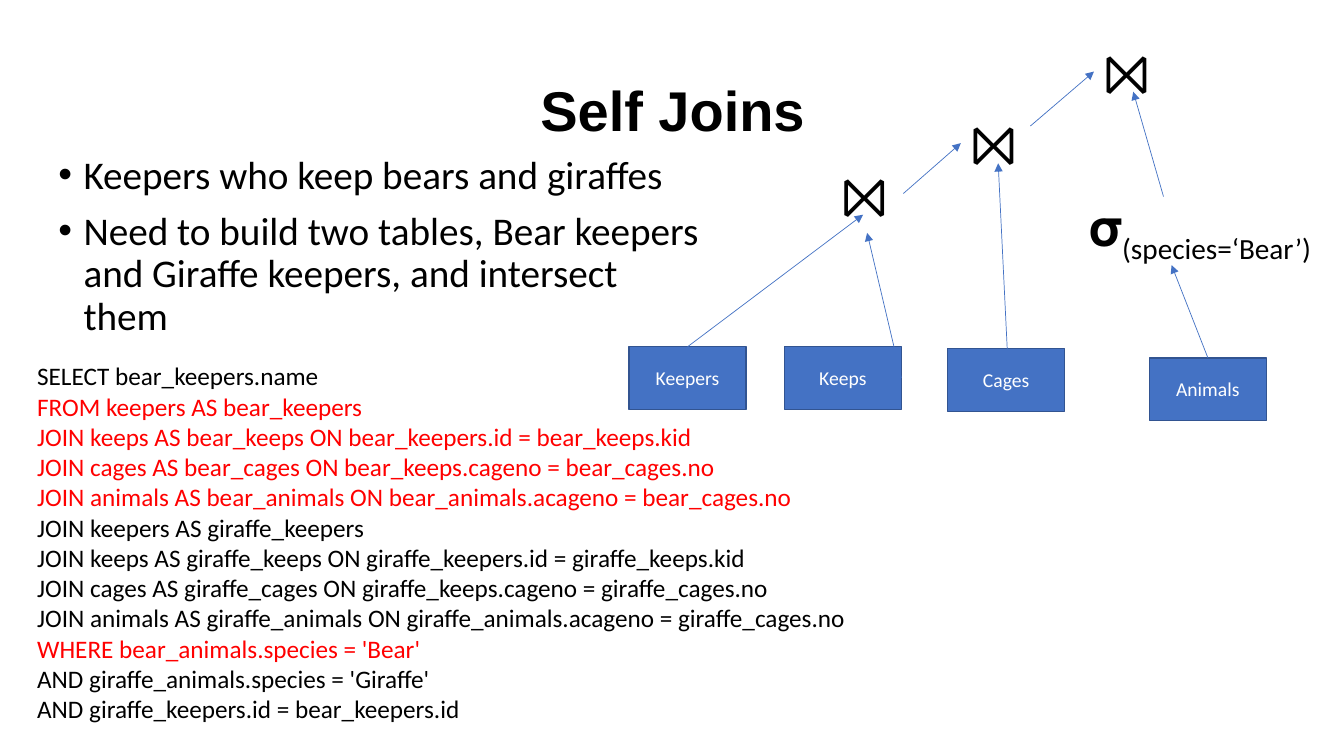
import dataclasses

import lxml.etree
import pptx
import pptx.dml.color
import pptx.enum.shapes
import pptx.enum.text
import pptx.oxml.ns
import pptx.util

Inches = pptx.util.Inches
Pt = pptx.util.Pt
qn = pptx.oxml.ns.qn
ANCHOR = pptx.enum.text.MSO_ANCHOR
ALIGN = pptx.enum.text.PP_ALIGN
BLACK, RED, WHITE, BLUE, NAVY = "000000", "FF0000", "FFFFFF", "4472C4", "325491"


@dataclasses.dataclass
class Relation:
    name: str
    x: float
    y: float


@dataclasses.dataclass
class Join:
    x: float
    y: float
    w: float


@dataclasses.dataclass
class Arrow:
    x1: float
    y1: float
    x2: float
    y2: float


RELATIONS = [
    Relation("Keepers", 6.24, 3.44),
    Relation("Keeps", 7.78, 3.44),
    Relation("Cages", 9.4, 3.46),
    Relation("Animals", 11.4, 3.55),
]
JOINS = [Join(8.25, 1.54, 0.71), Join(9.53, 1.03, 0.99), Join(10.85, 0.32, 0.58)]
ARROWS = [
    Arrow(8.94, 3.75, 8.6, 2.31),
    Arrow(9.99, 3.46, 9.9, 1.62),
    Arrow(8.96, 1.92, 9.53, 1.42),
    Arrow(6.82, 3.44, 8.56, 2.13),
    Arrow(11.54, 1.95, 11.24, 0.91),
    Arrow(10.22, 1.25, 10.85, 0.71),
    Arrow(11.98, 3.55, 11.62, 2.63),
]
BULLETS = [
    "Keepers who keep bears and giraffes",
    "Need to build two tables, Bear keepers and Giraffe keepers, and intersect them",
]
QUERY = [
    ("SELECT bear_keepers.name", BLACK),
    ("FROM keepers AS bear_keepers", RED),
    ("JOIN keeps AS bear_keeps ON bear_keepers.id = bear_keeps.kid", RED),
    ("JOIN cages AS bear_cages ON bear_keeps.cageno = bear_cages.no", RED),
    ("JOIN animals AS bear_animals ON bear_animals.acageno = bear_cages.no", RED),
    ("JOIN keepers AS giraffe_keepers", BLACK),
    ("JOIN keeps AS giraffe_keeps ON giraffe_keepers.id = giraffe_keeps.kid", BLACK),
    ("JOIN cages AS giraffe_cages ON giraffe_keeps.cageno = giraffe_cages.no", BLACK),
    ("JOIN animals AS giraffe_animals ON giraffe_animals.acageno = giraffe_cages.no", BLACK),
    ("WHERE bear_animals.species = 'Bear'", RED),
    ("AND giraffe_animals.species = 'Giraffe'", BLACK),
    ("AND giraffe_keepers.id = bear_keepers.id", BLACK),
]


def rgb(value: str) -> pptx.dml.color.RGBColor:
    return pptx.dml.color.RGBColor.from_string(value)


def add_run(p, text: str, *, size: float, color: str = BLACK, font: str = "Calibri",
            bold: bool = False, baseline: int = 0):
    r = p.add_run()
    r.text = text
    r.font.size = Pt(size)
    r.font.name = font
    r.font.bold = bold
    r.font.color.rgb = rgb(color)
    if baseline:
        r._r.get_or_add_rPr().set("baseline", str(baseline * 1000))
    return r


def add_frame(s, x: float, y: float, w: float, h: float, *, wrap: bool = True,
              anchor=ANCHOR.TOP):
    tf = s.shapes.add_textbox(Inches(x), Inches(y), Inches(w), Inches(h)).text_frame
    tf.word_wrap = wrap
    tf.vertical_anchor = anchor
    return tf


def next_paragraph(tf, i: int):
    return tf.add_paragraph() if i else tf.paragraphs[0]


def add_bullet(p) -> None:
    pPr = p._p.get_or_add_pPr()
    pPr.set("marL", str(Inches(0.25)))
    pPr.set("indent", str(-Inches(0.25)))
    lxml.etree.SubElement(pPr, qn("a:buFont")).set("typeface", "Arial")
    lxml.etree.SubElement(pPr, qn("a:buChar")).set("char", "•")


def add_relation(s, rel: Relation) -> None:
    sp = s.shapes.add_shape(pptx.enum.shapes.MSO_SHAPE.RECTANGLE, Inches(rel.x),
                            Inches(rel.y), Inches(1.16), Inches(0.62))
    sp.shadow.inherit = False
    sp.fill.solid()
    sp.fill.fore_color.rgb = rgb(BLUE)
    sp.line.color.rgb = rgb(NAVY)
    sp.line.width = Pt(1)
    tf = sp.text_frame
    tf.vertical_anchor = ANCHOR.MIDDLE
    tf.paragraphs[0].alignment = ALIGN.CENTER
    add_run(tf.paragraphs[0], rel.name, size=14, color=WHITE)


def add_join(s, join: Join) -> None:
    tf = add_frame(s, join.x, join.y, join.w, 0.77)
    add_run(tf.paragraphs[0], "⨝", size=40)


def add_arrow(s, a: Arrow) -> None:
    c = s.shapes.add_connector(pptx.enum.shapes.MSO_CONNECTOR.STRAIGHT, Inches(a.x1),
                               Inches(a.y1), Inches(a.x2), Inches(a.y2))
    c.line.color.rgb = rgb(BLUE)
    c.line.width = Pt(0.5)
    lxml.etree.SubElement(c.line._get_or_add_ln(), qn("a:tailEnd")).set("type", "triangle")
    lxml.etree.SubElement(c._element.spPr, qn("a:effectLst"))


def main() -> None:
    prs = pptx.Presentation()
    prs.slide_width = Inches(13.33)
    prs.slide_height = Inches(7.5)
    s = prs.slides.add_slide(prs.slide_layouts[6])

    p = add_frame(s, 0.92, 0.4, 11.5, 1.45, anchor=ANCHOR.MIDDLE).paragraphs[0]
    p.alignment = ALIGN.CENTER
    p.line_spacing = 0.9
    add_run(p, "Self Joins", size=40, font="Arial", bold=True)

    tf = add_frame(s, 0.48, 1.49, 6.59, 4.76)
    for i, text in enumerate(BULLETS):
        p = next_paragraph(tf, i)
        p.line_spacing = 0.9
        p.space_before = Pt(10)
        add_bullet(p)
        add_run(p, text, size=28)

    tf = add_frame(s, 0.27, 3.53, 8.49, 3.74)
    for i, (text, color) in enumerate(QUERY):
        add_run(next_paragraph(tf, i), text, size=18, color=color)

    for rel in RELATIONS:
        add_relation(s, rel)
    for join in JOINS:
        add_join(s, join)
    for arrow in ARROWS:
        add_arrow(s, arrow)

    p = add_frame(s, 10.7, 1.9, 2.7, 0.71, wrap=False).paragraphs[0]
    add_run(p, "𝛔", size=36)
    add_run(p, "(species=‘Bear’)", size=36, baseline=-25)

    prs.save("out.pptx")


if __name__ == "__main__":
    main()
